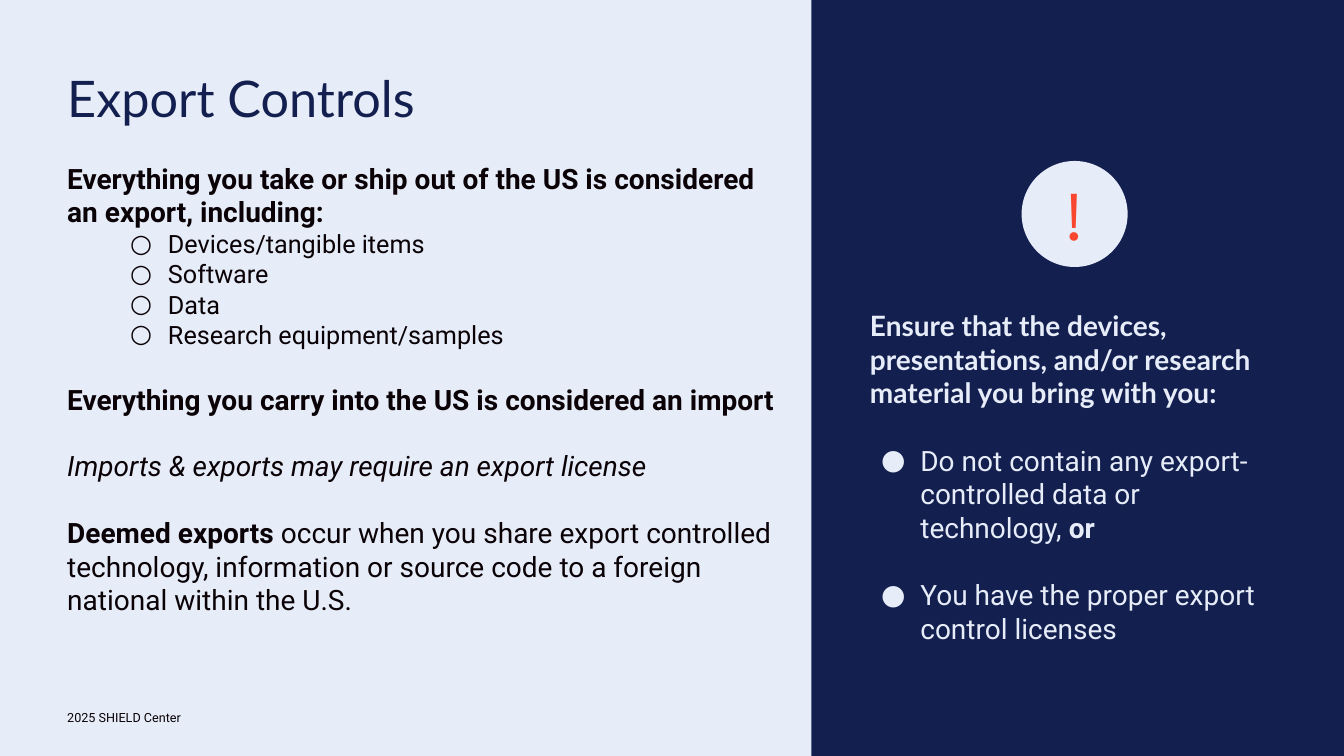
from dataclasses import dataclass
from typing import NamedTuple

from lxml import etree
from pptx import Presentation
from pptx import util as u
from pptx.dml.color import RGBColor
from pptx.enum import shapes, text
from pptx.oxml import ns


@dataclass(frozen=True)
class Theme:
    pale: str = "E6ECF8"
    navy: str = "131F4F"
    ink: str = "0A0206"
    alert: str = "F9472F"
    heading_font: str = "Lato"
    body_font: str = "Roboto"
    mark_font: str = "League Spartan"
    title_size: float = 36
    body_size: float = 20
    item_size: float = 18
    mark_size: float = 48
    footer_size: float = 9


class Box(NamedTuple):
    left: float
    top: float
    width: float
    height: float


class Piece(NamedTuple):
    wording: str
    bold: bool = False
    italic: bool = False


class Bullet(NamedTuple):
    symbol: str
    margin: float
    hanging: float
    level: int = 0


@dataclass(frozen=True)
class Line:
    pieces: tuple[Piece, ...]
    color: str
    size: float
    font: str
    gap: float = 0
    bullet: Bullet | None = None
    align: text.PP_ALIGN = text.PP_ALIGN.LEFT


THEME = Theme()
GAP = 23.5
RING = Bullet("○", 72, 27, level=1)
DOT = Bullet("●", 36, 28)


def place(shape, box: Box) -> None:
    shape.left, shape.top, shape.width, shape.height = map(u.Pt, box)


def set_bullet(paragraph, line: Line) -> None:
    properties = paragraph._p.get_or_add_pPr()
    bullet = line.bullet
    properties.set("marL", str(u.Pt(bullet.margin if bullet else 0)))
    properties.set("indent", str(u.Pt(-bullet.hanging if bullet else 0)))
    if bullet is None:
        etree.SubElement(properties, ns.qn("a:buNone"))
        return
    paragraph.level = bullet.level
    tint = etree.SubElement(properties, ns.qn("a:buClr"))
    etree.SubElement(tint, ns.qn("a:srgbClr"), val=line.color)
    etree.SubElement(properties, ns.qn("a:buFont"), typeface=line.font)
    etree.SubElement(properties, ns.qn("a:buChar"), char=bullet.symbol)


def write(shape, lines: list[Line], anchor=text.MSO_ANCHOR.TOP) -> None:
    frame = shape.text_frame
    frame.word_wrap = True
    frame.auto_size = text.MSO_AUTO_SIZE.NONE
    frame.vertical_anchor = anchor
    frame.margin_left = frame.margin_right = u.Pt(0)
    frame.margin_top = frame.margin_bottom = u.Pt(0)
    for index, line in enumerate(lines):
        paragraph = frame.add_paragraph() if index else frame.paragraphs[0]
        paragraph.alignment = line.align
        paragraph.line_spacing = 1.0
        paragraph.space_before = u.Pt(line.gap)
        paragraph.space_after = u.Pt(0)
        set_bullet(paragraph, line)
        for piece in line.pieces:
            run = paragraph.add_run()
            run.text = piece.wording
            run.font.name = line.font
            run.font.size = u.Pt(line.size)
            run.font.bold = piece.bold
            run.font.italic = piece.italic
            run.font.color.rgb = RGBColor.from_string(line.color)


def add_filled(slide, kind: shapes.MSO_SHAPE, box: Box, color: str):
    shape = slide.shapes.add_shape(kind, *map(u.Pt, box))
    shape.shadow.inherit = False
    shape.fill.solid()
    shape.fill.fore_color.rgb = RGBColor.from_string(color)
    shape.line.fill.background()
    return shape


def rule_line(*pieces: Piece, gap: float = GAP) -> Line:
    return Line(pieces, THEME.ink, THEME.body_size, THEME.body_font, gap)


def export_item(wording: str) -> Line:
    return Line((Piece(wording),), THEME.ink, THEME.item_size, THEME.body_font, bullet=RING)


def condition(*pieces: Piece) -> Line:
    return Line(pieces, THEME.pale, THEME.body_size, THEME.body_font, 24, DOT)


EXPORT_RULES = [
    rule_line(
        Piece("Everything you take or ship out of the US is considered an export, including:", bold=True),
        gap=0,
    ),
    *map(export_item, ("Devices/tangible items", "Software", "Data", "Research equipment/samples")),
    rule_line(Piece("Everything you carry into the US is considered an import", bold=True)),
    rule_line(Piece("Imports & exports may require an export license", italic=True)),
    rule_line(
        Piece("Deemed exports ", bold=True),
        Piece(
            "occur when you share export controlled technology, information "
            "or source code to a foreign national within the U.S."
        ),
    ),
]

TRAVEL_CHECKS = [
    Line(
        (Piece("Ensure that the devices, presentations, and/or research material you bring with you:", bold=True),),
        THEME.pale, THEME.body_size, THEME.heading_font,
    ),
    condition(
        Piece("Do not contain any export-controlled data or technology, "),
        Piece("or", bold=True),
    ),
    condition(Piece("You have the proper export control licenses")),
]


def main() -> None:
    deck = Presentation()
    deck.slide_width, deck.slide_height = u.Pt(960), u.Pt(540)
    slide = deck.slides.add_slide(deck.slide_layouts[3])
    slide.background.fill.solid()
    slide.background.fill.fore_color.rgb = RGBColor.from_string(THEME.pale)

    heading, rules, checks = slide.placeholders
    place(heading, Box(48, 48, 520, 48))
    write(heading, [Line((Piece("Export Controls"),), THEME.navy, THEME.title_size, THEME.heading_font)])
    place(rules, Box(48, 115.2, 510, 375))
    write(rules, EXPORT_RULES)

    panel = add_filled(slide, shapes.MSO_SHAPE.RECTANGLE, Box(579.5, 0, 380.5, 540), THEME.navy)
    heading.element.addprevious(panel.element)
    place(checks, Box(621.4, 220.5, 297.4, 243))
    write(checks, TRAVEL_CHECKS)

    badge = add_filled(slide, shapes.MSO_SHAPE.OVAL, Box(729.75, 115, 75.75, 75.75), THEME.pale)
    write(
        badge,
        [Line((Piece("!"),), THEME.alert, THEME.mark_size, THEME.mark_font, align=text.PP_ALIGN.CENTER)],
        text.MSO_ANCHOR.MIDDLE,
    )

    footer = slide.shapes.add_textbox(*map(u.Pt, Box(48, 494.6, 290, 36)))
    write(
        footer,
        [Line((Piece("2025 SHIELD Center"),), THEME.ink, THEME.footer_size, THEME.body_font)],
        text.MSO_ANCHOR.MIDDLE,
    )
    deck.save("out.pptx")


if __name__ == "__main__":
    main()
